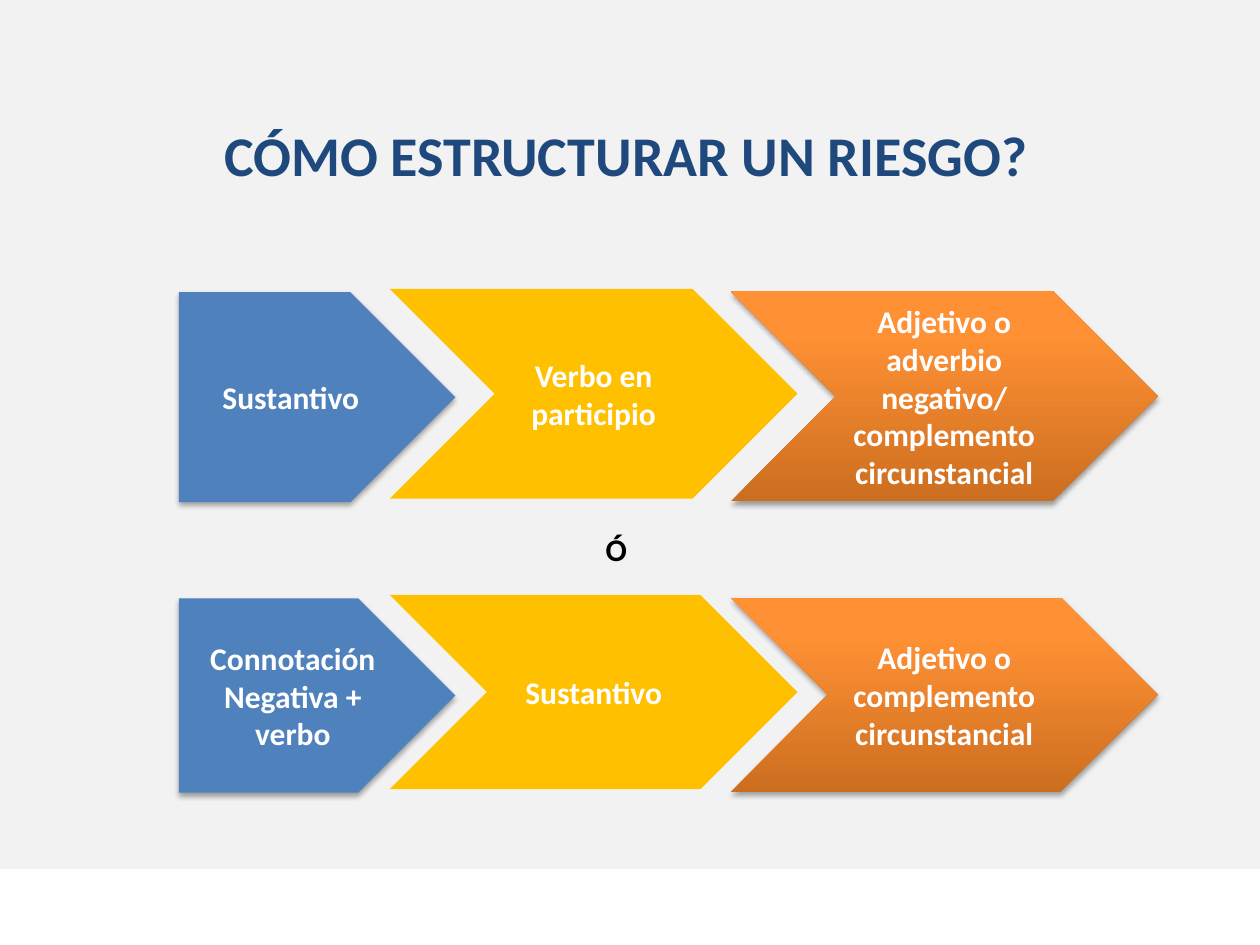
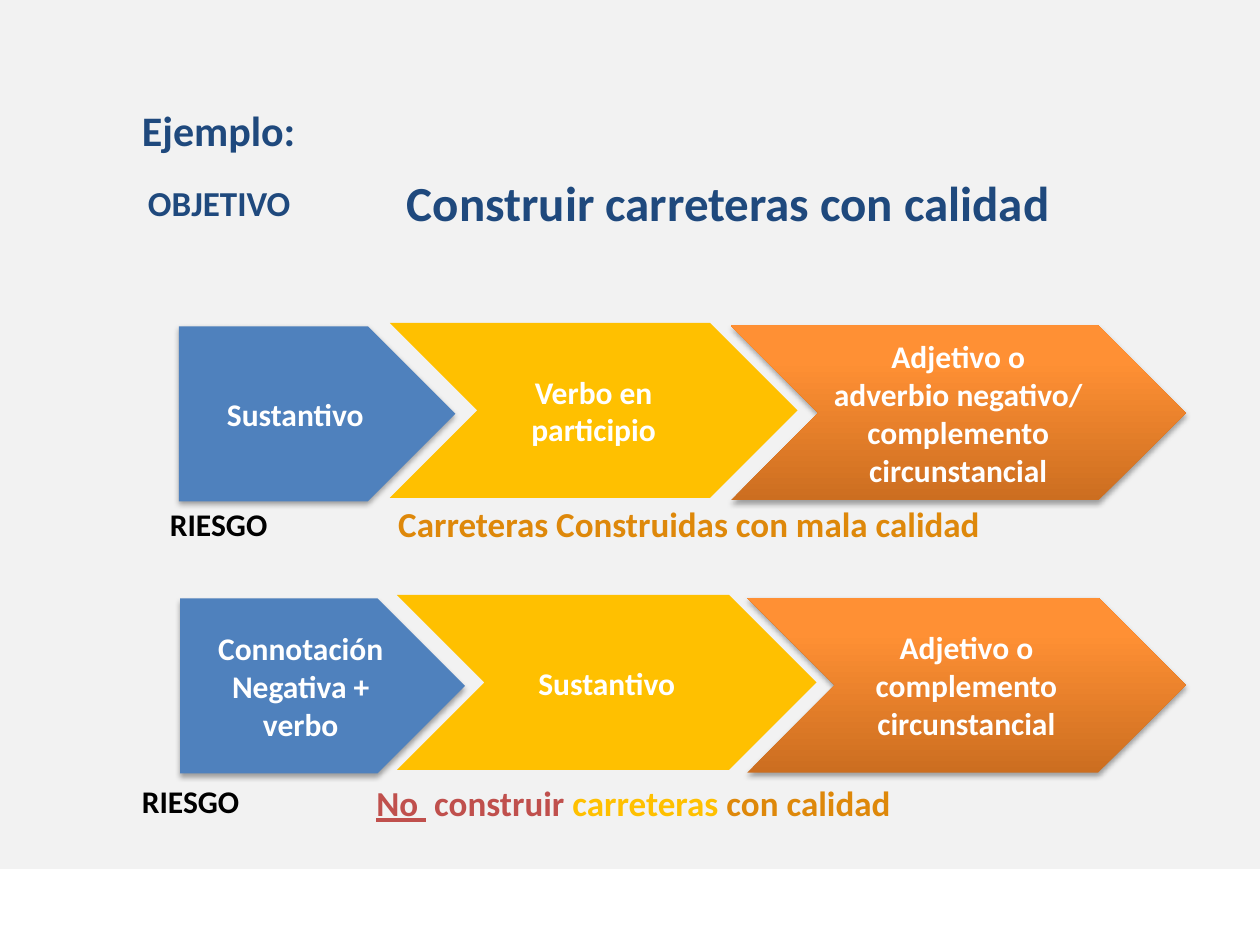
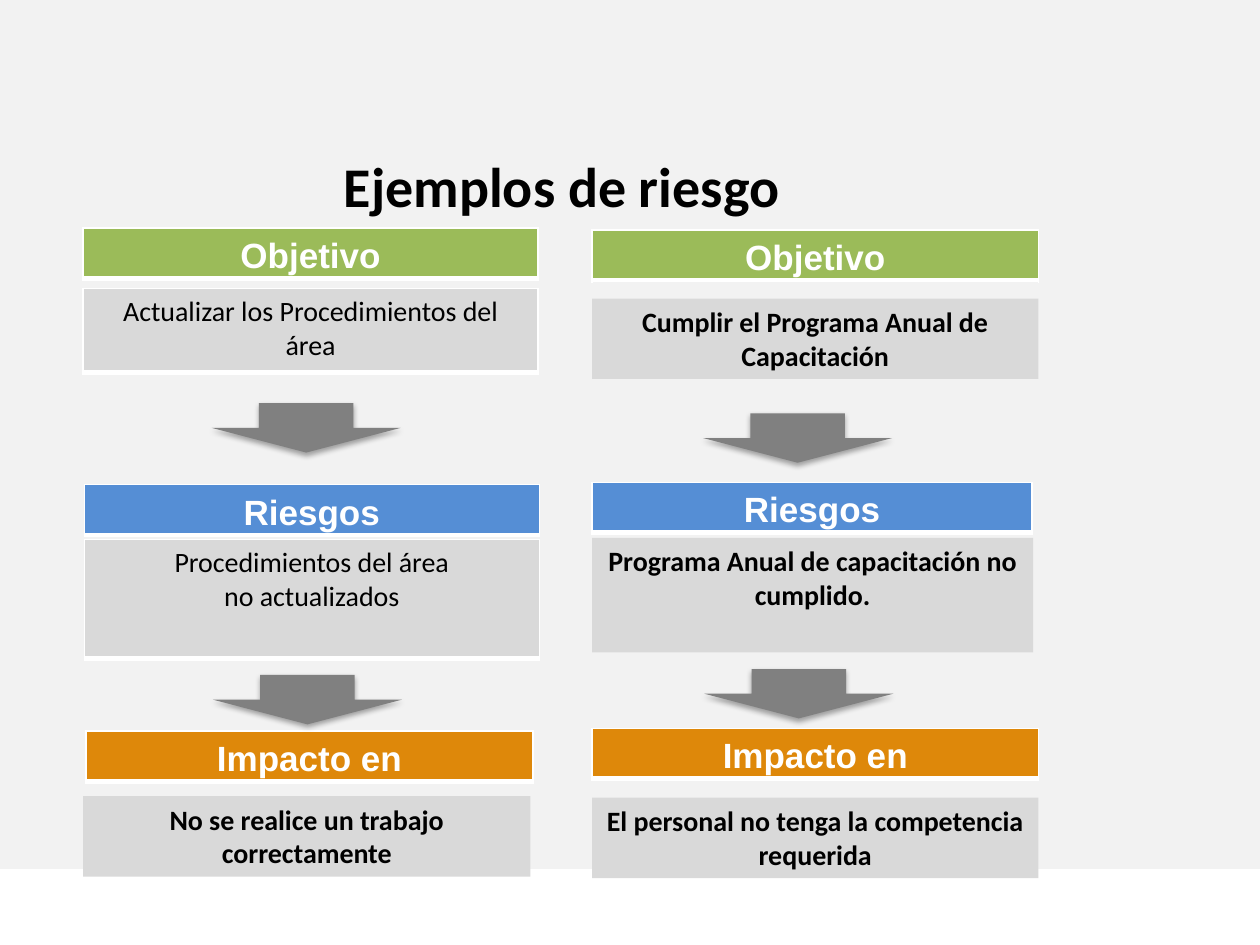
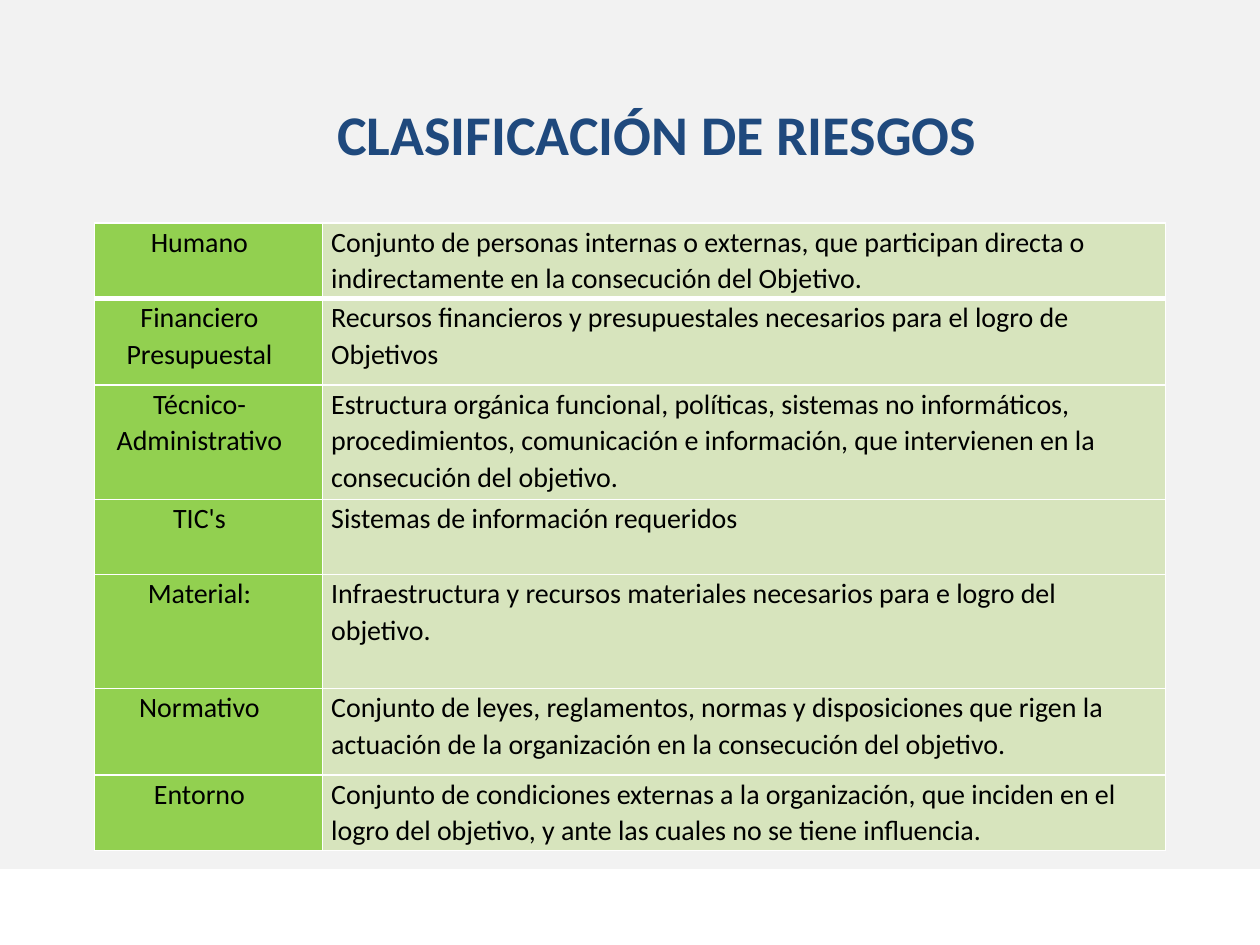
from copy import deepcopy
from dataclasses import dataclass, replace

from lxml import etree
from pptx import Presentation
from pptx.dml import color as dml
from pptx.enum import shapes as kinds, text as txt
from pptx.oxml import ns
from pptx.util import Pt

CENTER = txt.PP_ALIGN.CENTER
TOP = txt.MSO_ANCHOR.TOP
MIDDLE = txt.MSO_ANCHOR.MIDDLE
SHAPE = kinds.MSO_SHAPE


@dataclass(frozen=True)
class Type:
    size: float
    color: str
    bold: bool = True
    font: str = "Calibri"


@dataclass(frozen=True)
class Theme:
    white: str = "FFFFFF"
    black: str = "000000"
    band: str = "F2F2F2"
    navy: str = "1F497D"
    blue: str = "4F81BD"
    gold: str = "FFC000"
    amber: str = "DE880A"
    red: str = "C0504D"
    sky: str = "558ED5"
    green: str = "9BBB59"
    lime: str = "92D050"
    pale: str = "D7E4BD"
    gray: str = "D9D9D9"
    arrow: str = "808080"
    flame: tuple = ((0, "CC6E20"), (0.8, "FF9034"), (1, "FF9136"))
    title: float = 32
    head: float = 28
    lead: float = 24
    large: float = 20
    step: float = 18
    body: float = 16


THEME = Theme()
TITLE = Type(THEME.title, THEME.navy)
STEP = Type(THEME.step, THEME.white)
LABEL = Type(THEME.step, THEME.black)
STRONG = Type(THEME.body, THEME.black)
PLAIN = replace(STRONG, bold=False)
BAR = Type(THEME.large, THEME.white, font="Arial")


@dataclass(frozen=True)
class Box:
    left: float
    top: float
    width: float
    height: float

    def place(self) -> tuple:
        return Pt(self.left), Pt(self.top), Pt(self.width), Pt(self.height)


@dataclass(frozen=True)
class Flow:
    top: float
    height: float
    lefts: tuple
    widths: tuple
    words: tuple


@dataclass(frozen=True)
class Stage:
    title: str
    color: str
    bar: Box
    note: str
    area: Box
    framed: bool = False


def rgb(code: str) -> dml.RGBColor:
    return dml.RGBColor.from_string(code)


def node(parent, tag: str, **attrs):
    return etree.SubElement(parent, ns.qn(tag), {k: str(v) for k, v in attrs.items()})


def style(run, kind: Type, under: bool = False) -> None:
    font = run.font
    font.name, font.size, font.bold = kind.font, Pt(kind.size), kind.bold
    font.color.rgb = rgb(kind.color)
    if under:
        font.underline = True


def write(frame, words: str, kind: Type, align=None, space=None) -> None:
    frame.text = words
    for para in frame.paragraphs:
        if align is not None:
            para.alignment = align
        if space:
            para.line_spacing = space
        for run in para.runs:
            style(run, kind)


def label(slide, box: Box, words: str, kind: Type, align=None, wrap=False, grow=True):
    frame = slide.shapes.add_textbox(*box.place()).text_frame
    frame.word_wrap = wrap
    frame.auto_size = txt.MSO_AUTO_SIZE.SHAPE_TO_FIT_TEXT if grow else txt.MSO_AUTO_SIZE.NONE
    write(frame, words, kind, align)
    return frame


def blend(shape, stops: tuple) -> None:
    shape.fill.gradient()
    shape.fill.gradient_angle = 90
    marks = shape._element.spPr.find(".//" + ns.qn("a:gsLst"))
    marks.append(deepcopy(marks[-1]))
    for mark, (place, color) in zip(shape.fill.gradient_stops, stops):
        mark.position = place
        mark.color.rgb = rgb(color)


def cast(shape) -> None:
    glow = shape._element.spPr.find(ns.qn("a:effectLst"))
    shade = node(glow, "a:outerShdw", blurRad=int(Pt(3.15)), dist=int(Pt(1.81)),
                 dir=5400000, rotWithShape=0)
    tint = node(shade, "a:srgbClr", val=THEME.black)
    node(tint, "a:alpha", val=35000)


def draw(slide, form, box: Box, fill, words: str = "", kind: Type = STEP,
         anchor=MIDDLE, shadow: bool = False):
    shape = slide.shapes.add_shape(form, *box.place())
    if isinstance(fill, tuple):
        blend(shape, fill)
    else:
        shape.fill.solid()
        shape.fill.fore_color.rgb = rgb(fill)
    shape.line.fill.background()
    shape.shadow.inherit = False
    if shadow:
        cast(shape)
    if words:
        frame = shape.text_frame
        frame.word_wrap = True
        frame.vertical_anchor = anchor
        write(frame, words, kind, CENTER)
    return shape


def paint(cell, color: str, base: float) -> None:
    props = cell._tc.get_or_add_tcPr()
    for tag, width in (("a:lnL", 1), ("a:lnR", 1), ("a:lnT", 1), ("a:lnB", base)):
        line = node(props, tag, w=int(Pt(width)))
        node(node(line, "a:solidFill"), "a:srgbClr", val=THEME.white)
    cell.fill.solid()
    cell.fill.fore_color.rgb = rgb(color)


def inset(cell, left: float, right: float) -> None:
    cell.margin_left, cell.margin_right = Pt(left), Pt(right)
    cell.margin_top = cell.margin_bottom = Pt(0)


def grid(slide, box: Box, cols: tuple, rows: tuple):
    table = slide.shapes.add_table(len(rows), len(cols), *box.place()).table
    table.first_row = table.horz_banding = False
    for col, width in zip(table.columns, cols):
        col.width = Pt(width)
    for row, height in zip(table.rows, rows):
        row.height = Pt(height)
    return table


def single(slide, box: Box, color: str):
    cell = grid(slide, box, (box.width,), (box.height,)).cell(0, 0)
    paint(cell, color, 3)
    return cell


def steps(slide, flow: Flow) -> None:
    forms = (
        (SHAPE.PENTAGON, THEME.blue, 0, True),
        (SHAPE.CHEVRON, THEME.flame, -0.5, True),
        (SHAPE.CHEVRON, THEME.gold, -2, False),
    )
    for form, left, width, words in zip(forms, flow.lefts, flow.widths, flow.words):
        shape, fill, shift, shadow = form
        box = Box(left, flow.top + shift, width, flow.height)
        draw(slide, shape, box, fill, words, shadow=shadow)


def stack(slide, stages: tuple, arrows: tuple) -> None:
    for stage in stages:
        bar = single(slide, stage.bar, stage.color)
        bar.vertical_anchor = MIDDLE
        inset(bar, 5, 5)
        write(bar.text_frame, stage.title, BAR, CENTER, 1.15)
        if stage.framed:
            cell = single(slide, stage.area, THEME.gray)
            write(cell.text_frame, stage.note, PLAIN, CENTER)
        else:
            draw(slide, SHAPE.RECTANGLE, stage.area, THEME.gray, stage.note, STRONG, TOP)
    for left, top in arrows:
        draw(slide, SHAPE.DOWN_ARROW, Box(left, top, 108, 28.2), THEME.arrow, shadow=True)


LEFTS = (102.25, 417.6, 222.75)
FIRST = ("Sustantivo", "Adjetivo o adverbio negativo/ complemento circunstancial",
         "Verbo en participio")
SECOND = ("Connotación Negativa + verbo", "Adjetivo o complemento circunstancial",
          "Sustantivo")


def structure(slide) -> None:
    widths = (158, 244, 233)
    label(slide, Box(121, 65.5, 479, 46), "CÓMO ESTRUCTURAR UN RIESGO?", TITLE)
    steps(slide, Flow(342, 111, LEFTS, widths, SECOND))
    steps(slide, Flow(167, 120, LEFTS, widths, FIRST))
    label(slide, Box(339, 299.5, 34, 29), "Ó", LABEL, wrap=True)


def sample(slide) -> None:
    large = Type(THEME.large, THEME.navy)
    amber = replace(large, color=THEME.amber)
    label(slide, Box(225.5, 95, 440.5, 41), "Construir carreteras con calidad",
          Type(THEME.head, THEME.navy), wrap=True)
    label(slide, Box(77.5, 100, 96.5, 31.5), "OBJETIVO", large)
    label(slide, Box(74, 56, 103, 36), "Ejemplo:", Type(THEME.lead, THEME.navy))
    frame = label(slide, Box(208, 443, 453, 31.5), "", large, wrap=True)
    for words, color, under in (
        ("No ", THEME.red, True),
        (" construir ", THEME.red, False),
        ("carreteras ", THEME.gold, False),
        ("con calidad", THEME.amber, False),
    ):
        run = frame.paragraphs[0].add_run()
        run.text = words
        style(run, replace(large, color=color), under)
    label(slide, Box(74, 443.5, 72.5, 29), "RIESGO", LABEL)
    steps(slide, Flow(342, 100, (103, 427, 226.8), (162.7, 250.5, 239.8), SECOND))
    steps(slide, Flow(186.5, 100, LEFTS, (158, 260, 233), FIRST))
    label(slide, Box(220.5, 283.5, 440.5, 31.5), "Carreteras Construidas con mala calidad",
          amber, wrap=True)
    label(slide, Box(90, 285, 70.5, 29), "RIESGO", LABEL)


def cases(slide) -> None:
    label(slide, Box(38, 83, 566, 94), "Ejemplos de riesgo",
          replace(TITLE, color=THEME.black), CENTER, wrap=True, grow=False)
    high = 28.8
    stack(slide, (
        Stage("Objetivo", THEME.green, Box(47.5, 130.3, 260, high),
              "Actualizar los Procedimientos del área", Box(47.5, 164.9, 260, 48), True),
        Stage("Riesgos", THEME.sky, Box(48.2, 277, 260, high),
              "Procedimientos del área\nno actualizados", Box(48.2, 308.2, 260, 68), True),
        Stage("Impacto en", THEME.amber, Box(49, 417.6, 255.6, high),
              "No se realice un trabajo correctamente", Box(47.5, 455, 255.6, 46)),
    ), ((121, 230.4), (121.7, 385.7)))
    stack(slide, (
        Stage("Objetivo", THEME.green, Box(338.4, 131.3, 255, high),
              "Cumplir el Programa Anual de Capacitación", Box(338.4, 170.6, 255, 46)),
        Stage("Riesgos", THEME.sky, Box(338.4, 275.6, 251.3, high),
              "Programa Anual de capacitación no cumplido.", Box(338.4, 307.3, 252, 65.5)),
        Stage("Impacto en", THEME.amber, Box(338.4, 416.2, 255, high),
              "El personal no tenga la competencia requerida", Box(338.4, 455.8, 255, 46)),
    ), ((401.8, 236.2), (402.5, 382.3)))


RISKS = (
    ("Humano", 43, "Conjunto de personas internas o externas, que participan directa o "
     "indirectamente en la consecución del Objetivo."),
    ("Financiero Presupuestal", 49.5, "Recursos financieros y presupuestales necesarios "
     "para el logro de Objetivos"),
    ("Técnico-Administrativo", 65.5, "Estructura orgánica funcional, políticas, sistemas "
     "no informáticos, procedimientos, comunicación e información, que intervienen en la "
     "consecución del objetivo."),
    ("TIC's", 43, "Sistemas de información requeridos"),
    ("Material:", 65, "Infraestructura y recursos materiales necesarios para e logro del "
     "objetivo."),
    ("Normativo", 49.5, "Conjunto de leyes, reglamentos, normas y disposiciones que rigen "
     "la actuación de la organización en la consecución del objetivo."),
    ("Entorno", 43, "Conjunto de condiciones externas a la organización, que inciden en el "
     "logro del objetivo, y ante las cuales no se tiene influencia."),
)


def classes(slide) -> None:
    rows = tuple(height for _, height, _ in RISKS)
    table = grid(slide, Box(54, 127.5, 612, sum(rows)), (130.3, 481.7), rows)
    for index, (name, _, words) in enumerate(RISKS):
        base = 1 if index else 3
        left, right = table.cell(index, 0), table.cell(index, 1)
        paint(left, THEME.lime, base)
        inset(left, 5, 15.3)
        write(left.text_frame, name, PLAIN, CENTER, 1.07)
        paint(right, THEME.pale, base)
        inset(right, 5, 5)
        write(right.text_frame, words, PLAIN, space=1.07)
    label(slide, Box(183.5, 53.5, 384, 46), "CLASIFICACIÓN DE RIESGOS", TITLE, CENTER)


def main() -> None:
    deck = Presentation()
    deck.slide_width, deck.slide_height = Pt(720), Pt(540)
    blank = deck.slide_layouts[6]
    for index, build in enumerate((structure, sample, cases, classes)):
        slide = deck.slides.add_slide(blank)
        if index == 0:
            band = draw(slide, SHAPE.RECTANGLE, Box(0, 0, 720, 496.5), THEME.band)
            blank.shapes._spTree.append(band._element)
        build(slide)
    deck.save("out.pptx")


if __name__ == "__main__":
    main()
